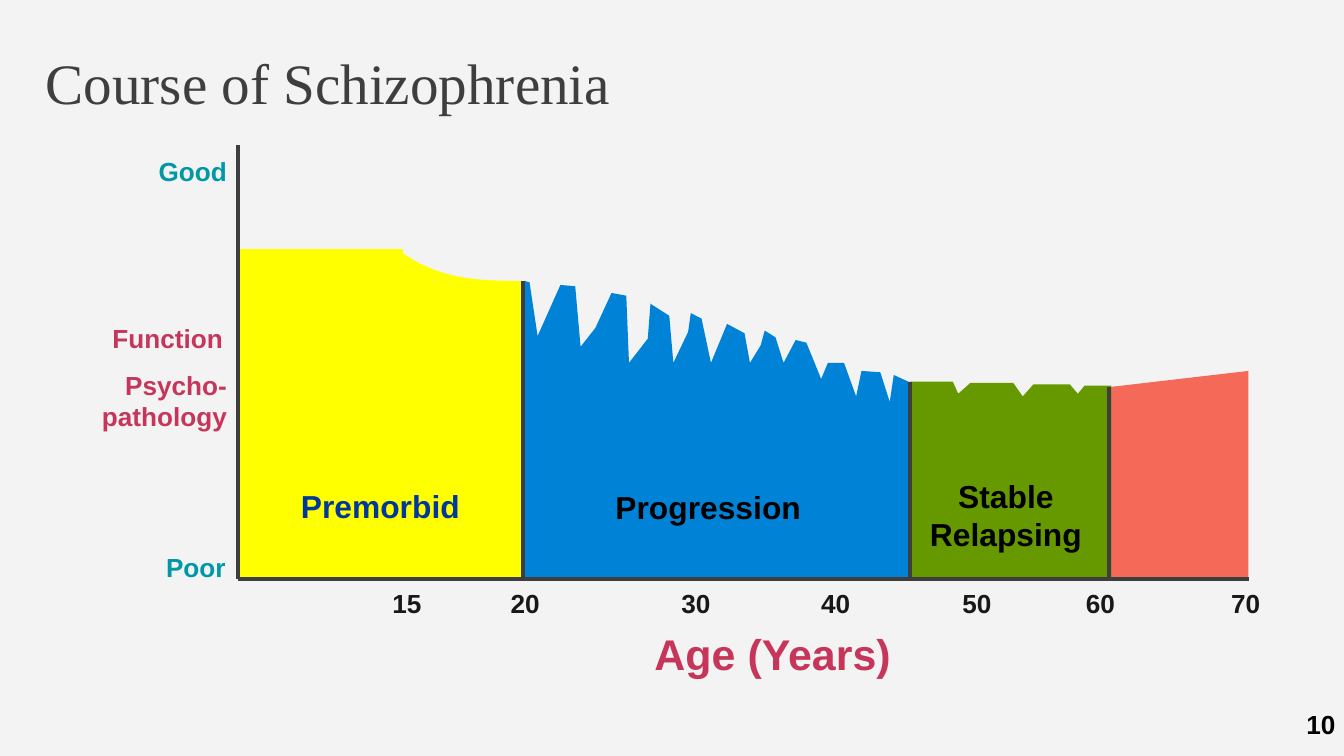
from lxml import etree
from pptx import Presentation
from pptx import util as u
from pptx.dml.color import RGBColor
from pptx.enum import shapes, text
from pptx.oxml import ns

BACKGROUND = RGBColor(0xF3, 0xF3, 0xF3)
CHARCOAL = RGBColor(0x3E, 0x3E, 0x3E)
INK = RGBColor(0x18, 0x18, 0x18)
BLACK = RGBColor(0x00, 0x00, 0x00)
NAVY = RGBColor(0x00, 0x37, 0x9A)
ROSE = RGBColor(0xC6, 0x36, 0x5A)
TEAL = RGBColor(0x00, 0x97, 0xA7)
YELLOW = RGBColor(0xFF, 0xFF, 0x00)
BLUE = RGBColor(0x00, 0x83, 0xD7)
GREEN = RGBColor(0x66, 0x99, 0x00)
CORAL = RGBColor(0xF4, 0x69, 0x58)
LEFT, CENTER, RIGHT = text.PP_ALIGN.LEFT, text.PP_ALIGN.CENTER, text.PP_ALIGN.RIGHT

deck = Presentation()
deck.slide_width = u.Inches(10)
deck.slide_height = deck.slide_width * 9 // 16
CELL = deck.slide_width / 100
page = deck.slides.add_slide(deck.slide_layouts[6])
page.background.fill.solid()
page.background.fill.fore_color.rgb = BACKGROUND


def write(words, place, size=14, color=BLACK, align=LEFT, font="Arial", bold=True, wrap=False, top=0.5):
    box = page.shapes.add_textbox(*[round(n * CELL) for n in place])
    frame = box.text_frame
    frame.word_wrap = wrap
    frame.auto_size = text.MSO_AUTO_SIZE.NONE if wrap else text.MSO_AUTO_SIZE.SHAPE_TO_FIT_TEXT
    frame.margin_left = frame.margin_right = round(CELL * (1.1 if wrap else 0.9))
    frame.margin_top, frame.margin_bottom = round(top * CELL), round(0.5 * CELL)
    for index, line in enumerate(words.split("\n")):
        para = frame.add_paragraph() if index else frame.paragraphs[0]
        para.alignment = align
        span = para.add_run()
        span.text = line
        span.font.name, span.font.size, span.font.bold = font, u.Pt(size), bold
        span.font.color.rgb = color


def fill_area(points, color):
    corners = [(round(x * CELL), round(y * CELL)) for x, y in points]
    builder = page.shapes.build_freeform(*corners[0], scale=1.0)
    builder.add_line_segments(corners[1:], close=True)
    area = builder.convert_to_shape()
    area.shadow.inherit = False
    area.fill.solid()
    area.fill.fore_color.rgb = color
    area.line.fill.background()


AXIS, FLOOR = 17.7, 43.1
ONSET, STABLE, LATE, END = 38.9, 67.7, 82.5, 92.9

write("Course of Schizophrenia", (2.3, 1.7, 95.5, 5.6), size=30.6, color=CHARCOAL,
      font="Times New Roman", bold=False, wrap=True, top=1.85)
write("Age (Years)", (47.6, 46.2, 19.8, 4.8), size=23, color=ROSE, align=CENTER)

for words, place, color in [
    ("Good", (10.8, 11.1, 7, 3.3), TEAL),
    ("Function", (7.4, 23.5, 10.1, 3.3), ROSE),
    ("Psycho-\npathology", (6.6, 27, 11.2, 5.6), ROSE),
    ("Poor", (11.4, 40.5, 6.3, 3.3), TEAL),
]:
    write(words, place, color=color, align=RIGHT)

for age, left in [(15, 28.3), (20, 37.1), (30, 49.8), (40, 60.2), (50, 70.7), (60, 79.9), (70, 90.7)]:
    write(str(age), (left, 43.2, 4, 3.3), color=INK)

decline = [(29.5 + 9.4 * step / 24, 20.9 - 2.4 * (1 - step / 24) ** 3) for step in range(25)]
relapses = [
    (39, 20.9), (39.4, 21), (40, 25), (41.7, 21.2), (42.8, 21.3), (43.2, 25.8), (44.3, 24.4),
    (45.5, 21.8), (46.6, 22), (46.8, 27), (48.2, 25.2), (48.4, 22.6), (49.8, 23.5), (50.1, 27),
    (51.2, 24.7), (51.4, 23.3), (52.2, 23.7), (52.9, 27), (54.1, 24.1), (55.4, 24.8), (55.8, 27),
    (56.6, 25.7), (56.9, 24.6), (57.7, 25.1), (58.3, 27), (59.2, 25.3), (60, 25.5), (61.1, 28.2),
    (61.6, 27), (62.8, 27), (63.7, 29.5), (64.1, 27.6), (65.5, 27.7), (66.2, 29.9), (66.5, 27.9),
    (67.6, 28.4), (67.9, 29.6),
]
plateau = [
    (STABLE, 28.4), (70.9, 28.4), (71.3, 29.3), (72.2, 28.5), (75.4, 28.5), (76.1, 29.5),
    (76.9, 28.6), (79.6, 28.6), (80.2, 29.3), (80.7, 28.7), (82.7, 28.7),
]
for outline, color in [
    ([(82.6, 28.8), (END, 27.6)], CORAL),
    ([(17.8, 18.5), (30, 18.5)], YELLOW),
    (decline, YELLOW),
    (relapses, BLUE),
    (plateau, GREEN),
]:
    fill_area(outline + [(outline[-1][0], FLOOR), (outline[0][0], FLOOR)], color)

for words, place, color in [
    ("Premorbid", (21.4, 35.7, 13.8, 3.8), NAVY),
    ("Progression", (44.8, 35.8, 15.8, 3.8), BLACK),
    ("Stable\nRelapsing", (68.2, 35, 13.3, 6.6), BLACK),
]:
    write(words, place, size=17, color=color, align=CENTER)

for start, finish in [
    ((AXIS, 10.8), (AXIS, FLOOR)),
    ((END, FLOOR), (AXIS, FLOOR)),
    ((STABLE, 28.4), (STABLE, FLOOR)),
    ((LATE, 28.8), (LATE, FLOOR)),
    ((ONSET, 20.9), (ONSET, FLOOR)),
]:
    rule = page.shapes.add_connector(
        shapes.MSO_CONNECTOR.STRAIGHT, *[round(n * CELL) for n in start + finish])
    rule.line.color.rgb = CHARCOAL
    rule.line.width = u.Pt(2)
    etree.SubElement(rule._element.spPr, ns.qn("a:effectLst"))

write("10", (96.3, 52.2, 4, 3.4))

deck.save("out.pptx")
